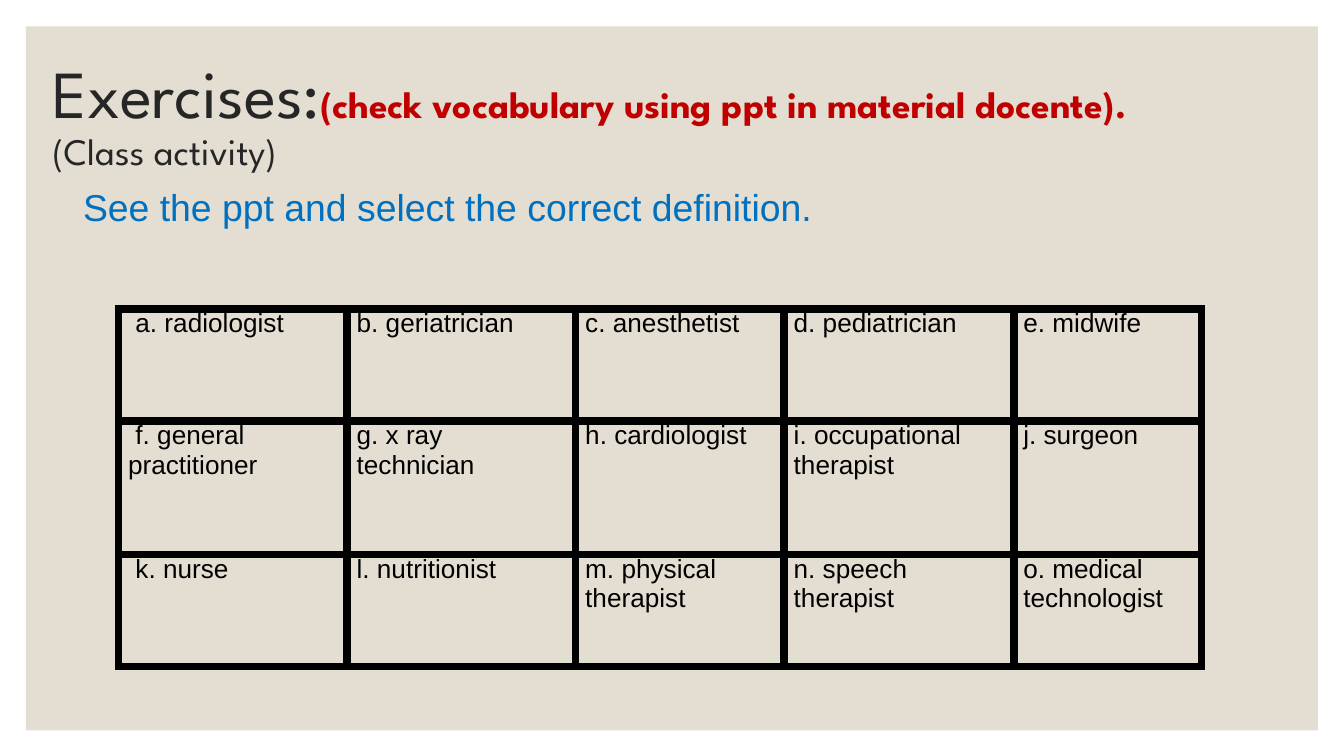
from dataclasses import dataclass

import pptx
import pptx.dml.color
import pptx.enum.shapes
import pptx.enum.text
import pptx.oxml
import pptx.oxml.ns
import pptx.util
from pptx.util import Cm

INK = "000000"
HEADING_FONT = "League Spartan"


@dataclass
class Span:
    text: str
    size: float
    color: str
    font: str = "Arial"
    bold: bool = False
    breaks: bool = False


@dataclass
class TextBlock:
    left: float
    top: float
    width: float
    height: float
    spans: list[Span]
    anchor: pptx.enum.text.MSO_ANCHOR = pptx.enum.text.MSO_ANCHOR.TOP
    line_spacing: float = 1.0


def rgb(value: str) -> pptx.dml.color.RGBColor:
    return pptx.dml.color.RGBColor.from_string(value)


def apply(target, formats: dict) -> None:
    for name, value in formats.items():
        setattr(target, name, value)


def add_span(para, span: Span) -> None:
    run = para.add_run()
    run.text = span.text
    apply(run.font, {"name": span.font, "size": pptx.util.Pt(span.size), "bold": span.bold})
    run.font.color.rgb = rgb(span.color)
    if span.breaks:
        para.add_line_break()


def add_text(page, block: TextBlock) -> None:
    box = page.shapes.add_textbox(Cm(block.left), Cm(block.top), Cm(block.width), Cm(block.height))
    apply(box.text_frame, {"word_wrap": True, "vertical_anchor": block.anchor})
    para = box.text_frame.paragraphs[0]
    para.line_spacing = block.line_spacing
    for span in block.spans:
        add_span(para, span)


def add_borders(cell, color: str, points: float) -> None:
    properties = cell._tc.get_or_add_tcPr()
    for index, side in enumerate(("lnL", "lnR", "lnT", "lnB")):
        border = pptx.oxml.parse_xml(
            f'<a:{side} {pptx.oxml.ns.nsdecls("a")} w="{pptx.util.Pt(points)}">'
            f'<a:solidFill><a:srgbClr val="{color}"/></a:solidFill></a:{side}>'
        )
        properties.insert(index, border)


def add_vocabulary(page, left: float, top: float, columns: list[float],
                   rows: list[float], words: list[list[str]]) -> None:
    table = page.shapes.add_table(len(rows), len(columns), Cm(left), Cm(top),
                                  Cm(sum(columns)), Cm(sum(rows))).table
    apply(table, {"first_row": False, "horz_banding": False})
    for column, width in zip(table.columns, columns):
        column.width = Cm(width)
    for row, height in zip(table.rows, rows):
        row.height = Cm(height)
    margins = {"margin_left": Cm(0.18), "margin_right": Cm(0.18), "margin_top": 0, "margin_bottom": 0}
    for r, line in enumerate(words):
        for c, word in enumerate(line):
            cell = table.cell(r, c)
            apply(cell, margins)
            cell.fill.background()
            add_borders(cell, INK, 4.5)
            para = cell.text_frame.paragraphs[0]
            add_span(para, Span(word, 14, INK))
            if c == 0:  # first line of the first column is slightly indented
                para._p.get_or_add_pPr().set("indent", str(Cm(0.14)))


def main() -> None:
    deck = pptx.Presentation()
    apply(deck, {"slide_width": Cm(25.4), "slide_height": Cm(14.28)})
    page = deck.slides.add_slide(deck.slide_layouts[6])

    # Background panel
    panel = page.shapes.add_shape(pptx.enum.shapes.MSO_SHAPE.RECTANGLE,
                                  Cm(0.49), Cm(0.5), Cm(24.42), Cm(13.3))
    panel.shadow.inherit = False
    panel.fill.solid()
    panel.fill.fore_color.rgb = rgb("E3DED1")
    panel.line.fill.background()

    # Heading
    add_text(page, TextBlock(0.74, 0.48, 24.13, 3.45, [
        Span("Exercises:", 36, "262626", HEADING_FONT),
        Span("(check vocabulary using ppt in material docente).", 20, "C00000",
             HEADING_FONT, bold=True, breaks=True),
        Span("(Class activity)", 20, "262626", HEADING_FONT),
    ], pptx.enum.text.MSO_ANCHOR.MIDDLE, 0.9))

    # Vocabulary table
    add_vocabulary(page, 2.24, 5.84, [4.32, 4.32, 3.94, 4.34, 3.55], [2.11, 2.53, 2.11], [
        ["a. radiologist", "b. geriatrician", "c. anesthetist", "d. pediatrician", "e. midwife"],
        ["f. general practitioner", "g. x ray technician", "h. cardiologist",
         "i. occupational therapist", "j. surgeon"],
        ["k. nurse", "l. nutritionist", "m. physical therapist", "n. speech therapist",
         "o. medical technologist"],
    ])

    # Instruction
    add_text(page, TextBlock(1.32, 3.35, 22.73, 1.12, [
        Span("See the ppt and select the correct definition.", 20, "0070C0"),
    ]))

    deck.save("out.pptx")


if __name__ == "__main__":
    main()
